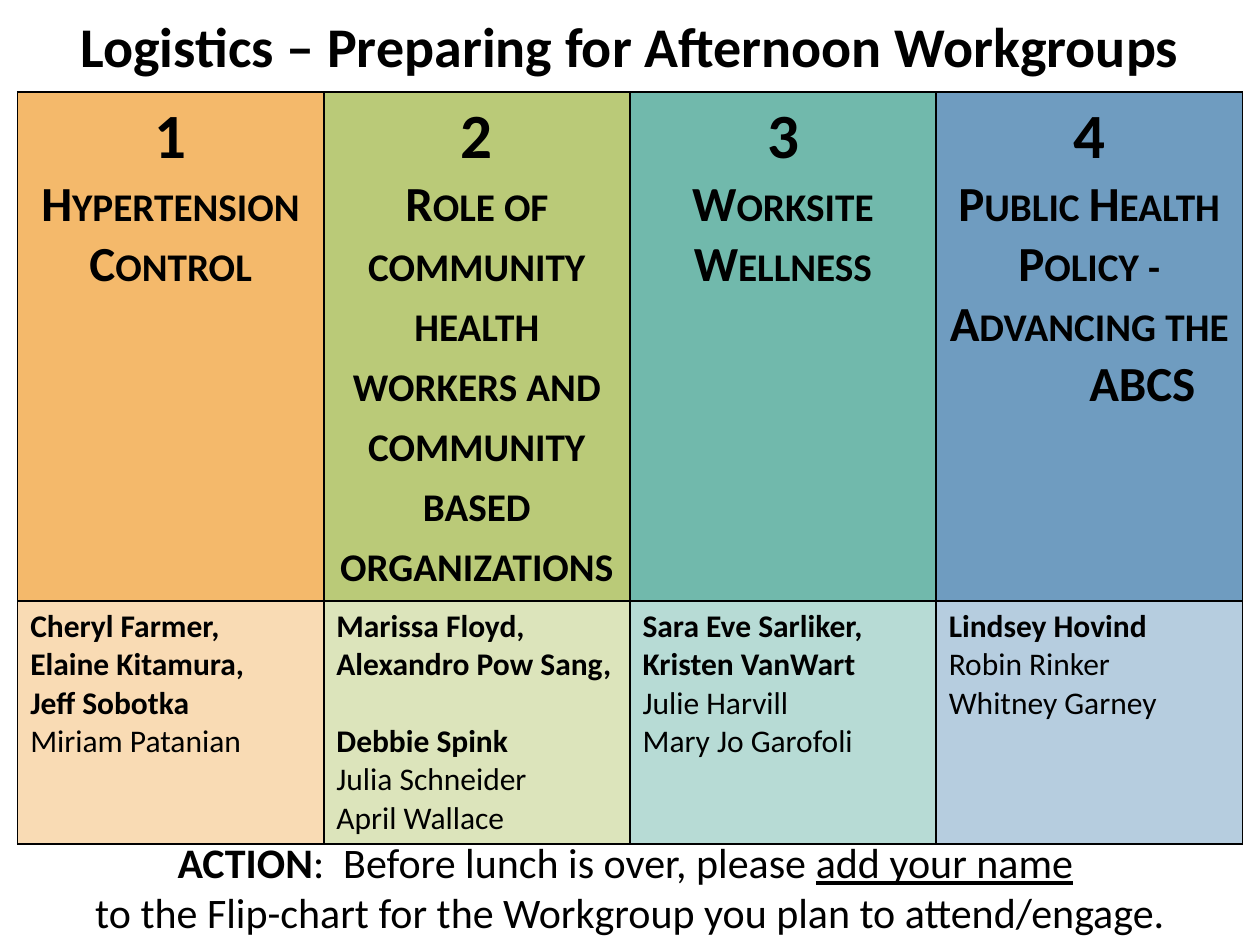
from lxml.etree import SubElement
from pptx import Presentation
from pptx.dml.color import RGBColor
from pptx.enum.text import PP_ALIGN
from pptx.oxml.ns import qn
from pptx.util import Inches, Pt

COLOURS = {"ink": "000000", "orange": "F4B96B", "green": "BACA78",
           "teal": "71B9AC", "blue": "6F9CC0"}

# Topic, colour, leaders (bold, one a line), other members
WORKGROUPS = [
    ("Hypertension Control", "orange",
     ["Cheryl Farmer, ", "Elaine Kitamura, ", "Jeff Sobotka"],
     ["Miriam Patanian"]),
    ("Role of community health workers and community based organizations", "green",
     ["Marissa Floyd, ", "Alexandro Pow Sang, ", "Debbie Spink"],
     ["Julia Schneider", "April Wallace"]),
    ("Worksite Wellness", "teal",
     ["Sara Eve Sarliker, ", "Kristen VanWart"],
     ["Julie Harvill", "Mary Jo Garofoli"]),
    ("Public Health Policy - Advancing the ABCS", "blue",
     ["Lindsey Hovind"], ["Robin Rinker", "Whitney Garney"]),
]


class SlideBuilder:
    font = "Calibri"
    margin, width = 0.14, 9.72

    def __init__(self, page):
        self.page = page

    def style(self, span, size, bold=False, underline=False, small_caps=False):
        span.font.name = self.font
        span.font.size = Pt(size)
        span.font.bold = bold
        span.font.underline = underline
        span.font.color.rgb = RGBColor.from_string(COLOURS["ink"])
        if small_caps:
            span.font._element.set("cap", "small")

    def text(self, top, height, size, lines):
        """Centred full-width box; each line is a list of (text, style) spans."""
        box = self.page.shapes.add_textbox(
            Inches(self.margin), Inches(top), Inches(self.width), Inches(height))
        frame = box.text_frame
        frame.word_wrap = True
        for index, spans in enumerate(lines):
            para = frame.add_paragraph() if index else frame.paragraphs[0]
            para.alignment = PP_ALIGN.CENTER
            for words, look in spans:
                span = para.add_run()
                span.text = words
                self.style(span, size, **look)

    def table(self, top, row_heights, columns):
        frame = self.page.shapes.add_table(
            len(row_heights), columns, Inches(self.margin), Inches(top),
            Inches(self.width), Inches(sum(row_heights)))
        table = frame.table
        table.first_row = table.horz_banding = False
        for row, height in zip(table.rows, row_heights):
            row.height = Inches(height)
        for column in table.columns:
            column.width = Inches(self.width / columns)
        return table

    def cell(self, cell, colour, paragraphs, align, opacity=100):
        """Bordered, filled cell; each paragraph is (text, size, style)."""
        properties = cell._tc.get_or_add_tcPr()
        for side in ("a:lnL", "a:lnR", "a:lnT", "a:lnB"):
            line = SubElement(properties, qn(side), w=str(Pt(1)))
            fill = SubElement(line, qn("a:solidFill"))
            SubElement(fill, qn("a:srgbClr"), val=COLOURS["ink"])
        cell.fill.solid()
        cell.fill.fore_color.rgb = RGBColor.from_string(COLOURS[colour])
        if opacity < 100:
            shade = properties.find(qn("a:solidFill")).find(qn("a:srgbClr"))
            SubElement(shade, qn("a:alpha"), val=str(opacity * 1000))
        cell.text_frame.text = "\n".join(words for words, _, _ in paragraphs)
        for para, (_, size, look) in zip(cell.text_frame.paragraphs, paragraphs):
            para.alignment = align
            for span in para.runs:
                self.style(span, size, **look)


def main():
    deck = Presentation()
    deck.slide_width, deck.slide_height = Inches(10), Inches(7.5)
    builder = SlideBuilder(deck.slides.add_slide(deck.slide_layouts[6]))
    bold = {"bold": True}

    # Workgroup table: topics above, people below
    table = builder.table(0.73, [3.14, 1.83], len(WORKGROUPS))
    for index, (topic, colour, leaders, members) in enumerate(WORKGROUPS):
        heading = [(str(index + 1), 36, bold),
                   (topic, 28, {"bold": True, "small_caps": True})]
        people = [("\v".join(leaders), 18, bold)]
        people += [(name, 18, {}) for name in members]
        builder.cell(table.cell(0, index), colour, heading, PP_ALIGN.CENTER)
        builder.cell(table.cell(1, index), colour, people, PP_ALIGN.LEFT, opacity=50)

    # Title
    builder.text(0.04, 0.64, 32,
                 [[("Logistics – Preparing for Afternoon Workgroups", bold)]])

    # Call to action
    builder.text(6.59, 0.91, 24, [
        [("ACTION", bold), (":  Before lunch is over, please ", {}),
         ("add your name", {"underline": True}), (" ", {})],
        [("to the Flip-chart for the Workgroup you plan to attend/engage.", {})],
    ])

    deck.save("out.pptx")


if __name__ == "__main__":
    main()
